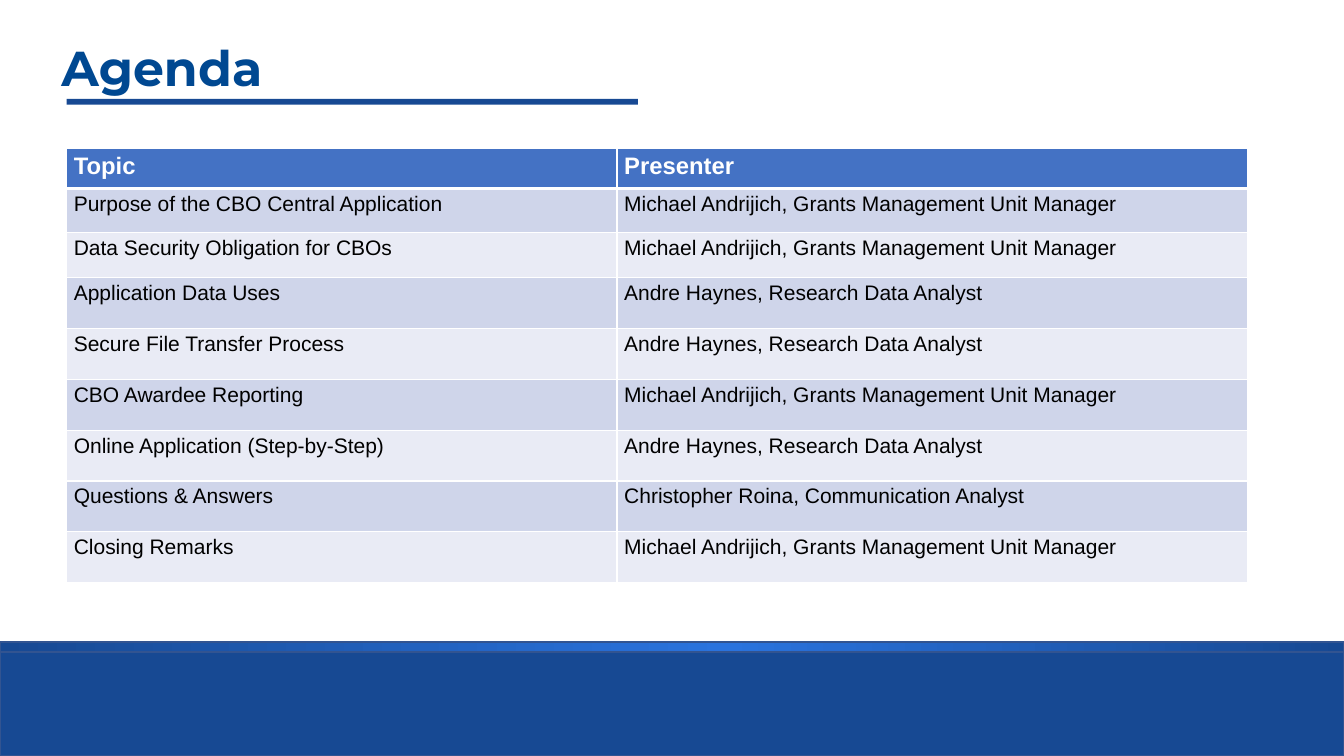
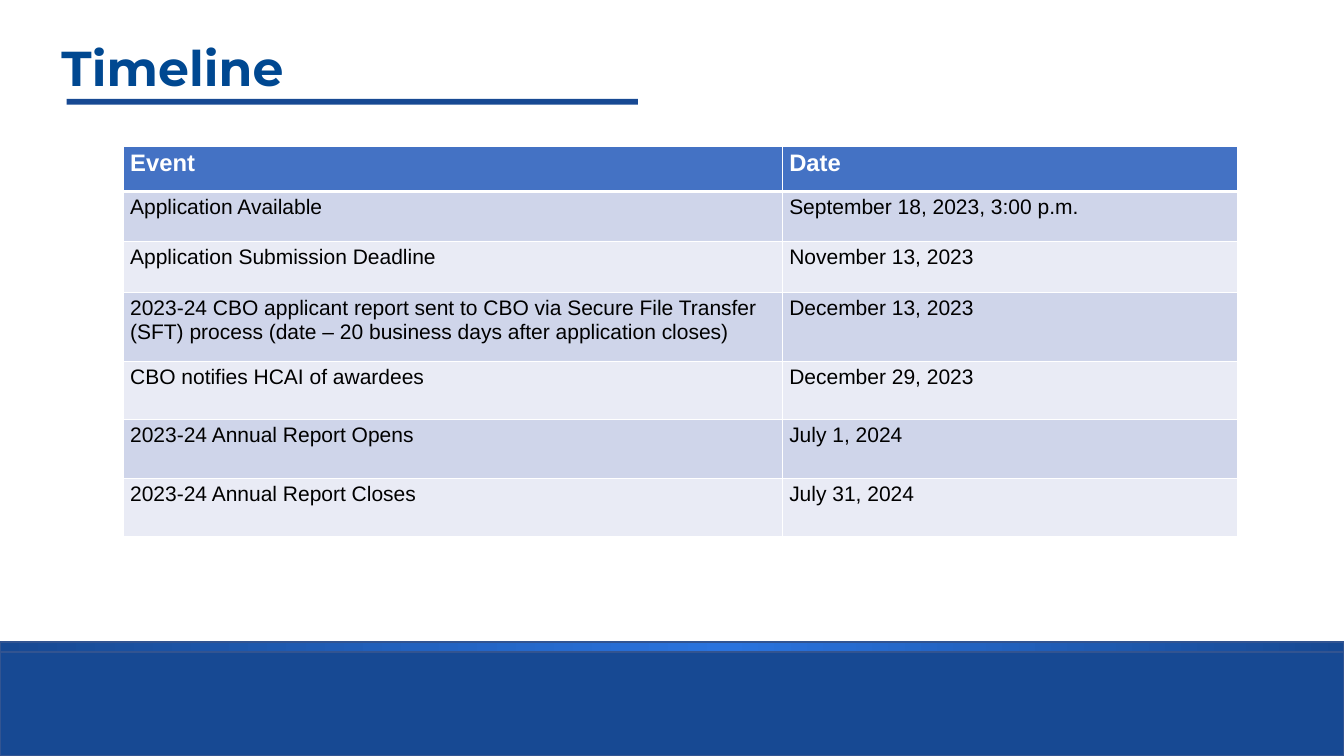
"""Build the agenda and timeline slides of a grant webinar."""
from copy import deepcopy
from dataclasses import dataclass

from lxml import etree
from pptx import Presentation
from pptx.dml.color import RGBColor
from pptx.enum.shapes import MSO_SHAPE
from pptx.enum.text import MSO_ANCHOR
from pptx.oxml.ns import qn
from pptx.util import Cm, Pt

RECTANGLE = MSO_SHAPE.RECTANGLE
MIDDLE = MSO_ANCHOR.MIDDLE
BLANK_LAYOUT = 6
SLIDE_WIDTH, SLIDE_HEIGHT = 33.87, 19.05


@dataclass(frozen=True)
class Theme:
    navy: str = "174993"
    bright_blue: str = "2A73DE"
    band_line: str = "325491"
    title_color: str = "004891"
    header_fill: str = "4472C4"
    row_fills: tuple = ("CFD5EA", "E9EBF5")
    white: str = "FFFFFF"
    black: str = "000000"
    title_font: str = "Montserrat"
    body_font: str = "Arial"
    title_size: int = 35
    header_size: int = 17
    body_size: int = 15
    thin_line: int = 1
    thick_line: int = 3


def rgb(color):
    return RGBColor.from_string(color)


def write_text(frame, text, *, font, size, color, bold=False, line_spacing=None):
    paragraph = frame.paragraphs[0]
    paragraph.line_spacing = line_spacing
    run = paragraph.add_run()
    run.text = text
    run.font.name = font
    run.font.size = Pt(size)
    run.font.bold = bold
    run.font.color.rgb = rgb(color)


class Deck:
    def __init__(self, theme):
        self.theme = theme
        self.presentation = Presentation()
        self.presentation.slide_width = Cm(SLIDE_WIDTH)
        self.presentation.slide_height = Cm(SLIDE_HEIGHT)
        self.slide = None

    def add_slide(self, title):
        layout = self.presentation.slide_layouts[BLANK_LAYOUT]
        self.slide = self.presentation.slides.add_slide(layout)
        self.add_footer()
        self.add_title(title)

    def add_bar(self, left, top, width, height, line=None):
        shape = self.slide.shapes.add_shape(
            RECTANGLE, Cm(left), Cm(top), Cm(width), Cm(height))
        shape.shadow.inherit = False
        shape.fill.solid()
        shape.fill.fore_color.rgb = rgb(self.theme.navy)
        if line:
            shape.line.color.rgb = rgb(line)
            shape.line.width = Pt(self.theme.thin_line)
        else:
            shape.line.fill.background()
        return shape

    def add_footer(self):
        theme = self.theme
        band_top, strip_height = 16.43, 0.25
        self.add_bar(0, band_top, SLIDE_WIDTH, SLIDE_HEIGHT - band_top, theme.band_line)
        strip = self.add_bar(
            0, band_top - strip_height, SLIDE_WIDTH, strip_height, theme.band_line)
        strip.fill.gradient()
        strip.fill.gradient_angle = 0
        stop_list = next(strip.element.iter(qn("a:gsLst")))
        stop_list.append(deepcopy(stop_list[-1]))
        stops = ((0, theme.navy), (0.54, theme.bright_blue), (1, theme.navy))
        for stop, (position, color) in zip(strip.fill.gradient_stops, stops):
            stop.position = position
            stop.color.rgb = rgb(color)

    def add_title(self, title):
        theme = self.theme
        box = self.slide.shapes.add_textbox(Cm(1.3), Cm(0.69), Cm(31.7), Cm(2.16))
        box.text_frame.word_wrap = True
        box.text_frame.vertical_anchor = MIDDLE
        write_text(box.text_frame, title, font=theme.title_font, size=theme.title_size,
                   color=theme.title_color, bold=True, line_spacing=0.9)
        self.add_bar(1.68, 2.49, 14.4, 0.15)

    def add_borders(self, cell, row_index):
        theme = self.theme
        widths = {
            "lnL": theme.thin_line,
            "lnR": theme.thin_line,
            "lnT": theme.thick_line if row_index == 1 else theme.thin_line,
            "lnB": theme.thick_line if row_index == 0 else theme.thin_line,
        }
        properties = cell._tc.get_or_add_tcPr()
        for side, width in widths.items():
            line = etree.SubElement(properties, qn(f"a:{side}"), w=str(Pt(width)))
            fill = etree.SubElement(line, qn("a:solidFill"))
            etree.SubElement(fill, qn("a:srgbClr"), val=theme.white)

    def add_cell(self, cell, text, row_index):
        theme = self.theme
        is_header = row_index == 0
        cell.margin_left = cell.margin_right = Cm(0.18)
        cell.margin_top = cell.margin_bottom = Cm(0.1)
        self.add_borders(cell, row_index)
        cell.fill.solid()
        cell.fill.fore_color.rgb = rgb(
            theme.header_fill if is_header else theme.row_fills[(row_index - 1) % 2])
        write_text(cell.text_frame, text, font=theme.body_font, bold=is_header,
                   size=theme.header_size if is_header else theme.body_size,
                   color=theme.white if is_header else theme.black)

    def add_table(self, rows, left, top, column_widths, row_heights):
        table = self.slide.shapes.add_table(
            len(rows), len(column_widths), Cm(left), Cm(top),
            Cm(sum(column_widths)), Cm(sum(row_heights))).table
        for column, width in zip(table.columns, column_widths):
            column.width = Cm(width)
        for row_index, (texts, height) in enumerate(zip(rows, row_heights)):
            table.rows[row_index].height = Cm(height)
            for column_index, text in enumerate(texts):
                self.add_cell(table.cell(row_index, column_index), text, row_index)


def main():
    manager = "Michael Andrijich, Grants Management Unit Manager"
    analyst = "Andre Haynes, Research Data Analyst"
    agenda = [
        ("Topic", "Presenter"),
        ("Purpose of the CBO Central Application", manager),
        ("Data Security Obligation for CBOs", manager),
        ("Application Data Uses", analyst),
        ("Secure File Transfer Process", analyst),
        ("CBO Awardee Reporting", manager),
        ("Online Application (Step-by-Step)", analyst),
        ("Questions & Answers", "Christopher Roina, Communication Analyst"),
        ("Closing Remarks", manager),
    ]
    timeline = [
        ("Event", "Date"),
        ("Application Available", "September 18, 2023, 3:00 p.m."),
        ("Application Submission Deadline", "November 13, 2023"),
        ("2023-24 CBO applicant report sent to CBO via Secure File Transfer (SFT) "
         "process (date – 20 business days after application closes)",
         "December 13, 2023"),
        ("CBO notifies HCAI of awardees", "December 29, 2023"),
        ("2023-24 Annual Report Opens", "July 1, 2024"),
        ("2023-24 Annual Report Closes", "July 31, 2024"),
    ]
    deck = Deck(Theme())
    deck.add_slide("Agenda")
    deck.add_table(agenda, 1.68, 3.75, (13.87, 15.9), [1.0, 1.1, 1.15] + [1.28] * 6)
    deck.add_slide("Timeline")
    deck.add_table(timeline, 3.1, 3.68, (16.61, 11.48), [1.15, 1.25, 1.3, 1.73] + [1.47] * 3)
    deck.presentation.save("out.pptx")


if __name__ == "__main__":
    main()
